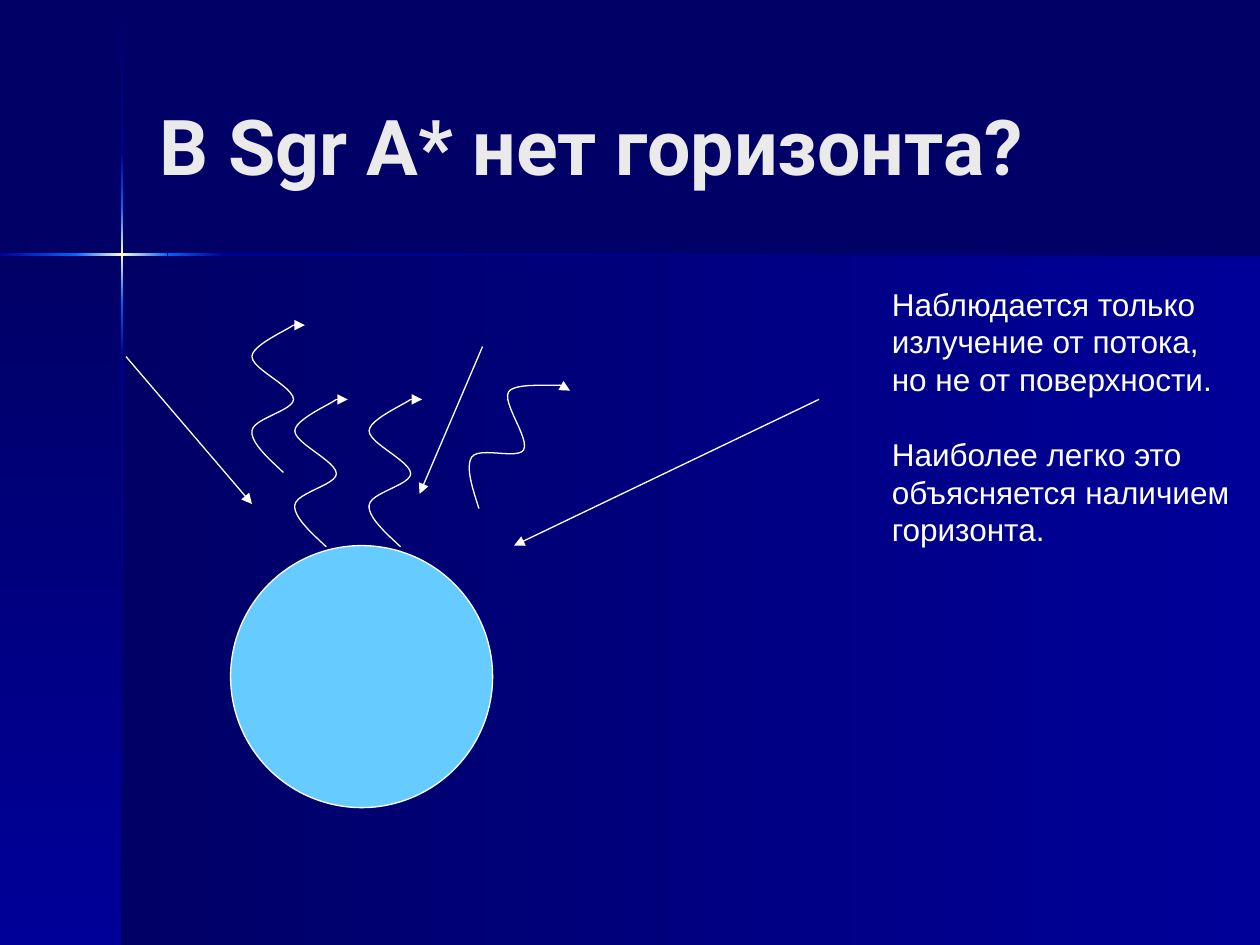
from copy import deepcopy
from dataclasses import dataclass
from math import cos, radians, sin

from lxml import etree
from pptx import Presentation
from pptx.dml.color import RGBColor
from pptx.enum.shapes import MSO_CONNECTOR, MSO_SHAPE
from pptx.enum.text import MSO_ANCHOR
from pptx.oxml.ns import qn
from pptx.util import Inches, Pt


@dataclass(frozen=True)
class Theme:
    navy: str = "000066"
    blue: str = "000099"
    glow: str = "0066FF"
    spark: str = "FFFFCC"
    star: str = "66CCFF"
    white: str = "FFFFFF"
    title_color: str = "EAEAEA"
    title_font: str = "Roboto"
    body_font: str = "Arial"
    title_size: Pt = Pt(44)
    body_size: Pt = Pt(18)
    line_width: Pt = Pt(0.75)


THEME = Theme()
WIDTH, HEIGHT = 10, 7.5
CROSS_X, CROSS_Y = 0.97, 2.02
BEAM = 0.02

# One wavy ray, relative to its box: a start, then cubic Bezier segments.
WAVE_BOX = (0.35, 1.17)
WAVE_START = (0.26, 1.17)
WAVE_CURVES = [
    ((0.13, 1.05), (0, 0.93), (0.01, 0.84)),
    ((0.02, 0.74), (0.34, 0.68), (0.34, 0.59)),
    ((0.34, 0.49), (0.01, 0.35), (0.01, 0.25)),
    ((0.01, 0.16), (0.29, 0.04), (0.34, 0)),
]
WAVE_TIP = (0.43, 0)
CURVE_STEPS = 12


def rgb(color):
    return RGBColor.from_string(color)


def style_line(line):
    line.color.rgb = rgb(THEME.white)
    line.width = THEME.line_width


def add_gradient_box(slide, box, colors, vertical=False):
    """Add a borderless rectangle with evenly spaced gradient stops."""
    shape = slide.shapes.add_shape(MSO_SHAPE.RECTANGLE, *map(Inches, box))
    shape.shadow.inherit = False
    shape.line.fill.background()
    shape.fill.gradient()
    shape.fill.gradient_angle = 270 if vertical else 0
    stop_list = shape.fill._fill._gradFill.find(qn("a:gsLst"))
    for _ in colors[2:]:
        stop_list.append(deepcopy(stop_list[-1]))
    for index, (stop, color) in enumerate(zip(shape.fill.gradient_stops, colors)):
        stop.position = index / (len(colors) - 1)
        stop.color.rgb = rgb(color)


def add_backdrop(slide):
    slide.background.fill.solid()
    slide.background.fill.fore_color.rgb = rgb(THEME.navy)
    panel = (THEME.navy, THEME.blue)
    add_gradient_box(slide, (CROSS_X, CROSS_Y, WIDTH - CROSS_X, HEIGHT - CROSS_Y), panel)
    add_gradient_box(slide, (0, CROSS_Y, CROSS_X, HEIGHT - CROSS_Y), panel, True)

    rise, fade = (THEME.blue, THEME.glow), (THEME.glow, THEME.blue)
    flash = (THEME.glow, THEME.spark, THEME.glow)
    dim = (THEME.blue, THEME.navy)
    vertical_beam = [(0.01, 1.21, panel), (2.82, HEIGHT, dim), (2.38, 2.82, fade),
                     (1.21, 1.65, rise), (1.65, 2.38, flash)]
    horizontal_beam = [(1.77, WIDTH, dim), (0, 0.61, rise),
                       (1.33, 1.77, fade), (0.6, 1.33, flash)]
    for start, end, colors in vertical_beam:
        add_gradient_box(slide, (CROSS_X - BEAM / 2, start, BEAM, end - start), colors, True)
    for start, end, colors in horizontal_beam:
        add_gradient_box(slide, (start, CROSS_Y - BEAM / 2, end - start, BEAM), colors)


def add_text(slide, box, paragraphs, font, size, color, bold=False, wrap=True,
             anchor=MSO_ANCHOR.TOP, gap=Pt(0)):
    frame = slide.shapes.add_textbox(*map(Inches, box)).text_frame
    frame.word_wrap = wrap
    frame.vertical_anchor = anchor
    for index, text in enumerate(paragraphs):
        paragraph = frame.add_paragraph() if index else frame.paragraphs[0]
        paragraph.text = text
        paragraph.space_before = gap if index else Pt(0)
        paragraph.font.name = font
        paragraph.font.size = size
        paragraph.font.bold = bold
        paragraph.font.color.rgb = rgb(color)


def add_arrow(slide, start, end):
    arrow = slide.shapes.add_connector(MSO_CONNECTOR.STRAIGHT, *map(Inches, (*start, *end)))
    style_line(arrow.line)
    etree.SubElement(arrow.line._get_or_add_ln(), qn("a:tailEnd"), type="triangle")
    etree.SubElement(arrow._element.spPr, qn("a:effectLst"))


def wave_points():
    points = [WAVE_START]
    for curve in WAVE_CURVES:
        corners = (points[-1], *curve)
        for step in range(1, CURVE_STEPS + 1):
            t = step / CURVE_STEPS
            weights = ((1 - t) ** 3, 3 * t * (1 - t) ** 2, 3 * t * t * (1 - t), t ** 3)
            points.append(tuple(sum(weight * corner[axis]
                                    for weight, corner in zip(weights, corners))
                                for axis in (0, 1)))
    return points


def add_wave(slide, left, top, angle=0):
    """Add a wavy ray with an arrowhead, turned clockwise about its box centre."""
    half_width, half_height = WAVE_BOX[0] / 2, WAVE_BOX[1] / 2
    cosine, sine = cos(radians(angle)), sin(radians(angle))

    def place(point):
        x, y = point[0] - half_width, point[1] - half_height
        return (left + half_width + x * cosine - y * sine,
                top + half_height + x * sine + y * cosine)

    points = [place(point) for point in wave_points()]
    vertices = [(Inches(x), Inches(y)) for x, y in points]
    builder = slide.shapes.build_freeform(*vertices[0])
    builder.add_line_segments(vertices[1:], close=False)
    wave = builder.convert_to_shape()
    wave.shadow.inherit = False
    wave.fill.background()
    style_line(wave.line)
    add_arrow(slide, points[-1], place(WAVE_TIP))


def add_accretion_diagram(slide, left, top):
    """Draw the star, infalling flow and outgoing rays from a top-left corner."""
    diameter = 2.08
    star = slide.shapes.add_shape(MSO_SHAPE.OVAL, Inches(left + 0.83), Inches(top + 1.75),
                                  Inches(diameter), Inches(diameter))
    star.shadow.inherit = False
    star.fill.solid()
    star.fill.fore_color.rgb = rgb(THEME.star)
    style_line(star.line)

    flow = [((0, 0.25), (1, 1.42)), ((2.83, 0.17), (2.33, 1.34)), ((5.5, 0.59), (3.08, 1.75))]
    for ends in flow:
        add_arrow(slide, *[(left + x, top + y) for x, y in ends])
    for x, y, angle in [(0.99, 0, 0), (2.84, 0.32, 29.4), (1.33, 0.59, 0), (1.92, 0.59, 0)]:
        add_wave(slide, left + x, top + y, angle)


def main():
    presentation = Presentation()
    presentation.slide_width, presentation.slide_height = Inches(WIDTH), Inches(HEIGHT)
    slide = presentation.slides.add_slide(presentation.slide_layouts[6])
    add_backdrop(slide)
    add_text(slide, (1.17, 0.42, 9.31, 1.45), ["В Sgr A* нет горизонта?"],
             THEME.title_font, THEME.title_size, THEME.title_color,
             bold=True, anchor=MSO_ANCHOR.MIDDLE)
    add_accretion_diagram(slide, 1, 2.58)
    add_text(slide, (6.98, 2.21, 2.9, 2.2),
             ["Наблюдается только\vизлучение от потока,\vно не от поверхности.",
              "Наиболее легко это\vобъясняется наличием\vгоризонта."],
             THEME.body_font, THEME.body_size, THEME.white, wrap=False, gap=Pt(21))
    presentation.save("out.pptx")


if __name__ == "__main__":
    main()
